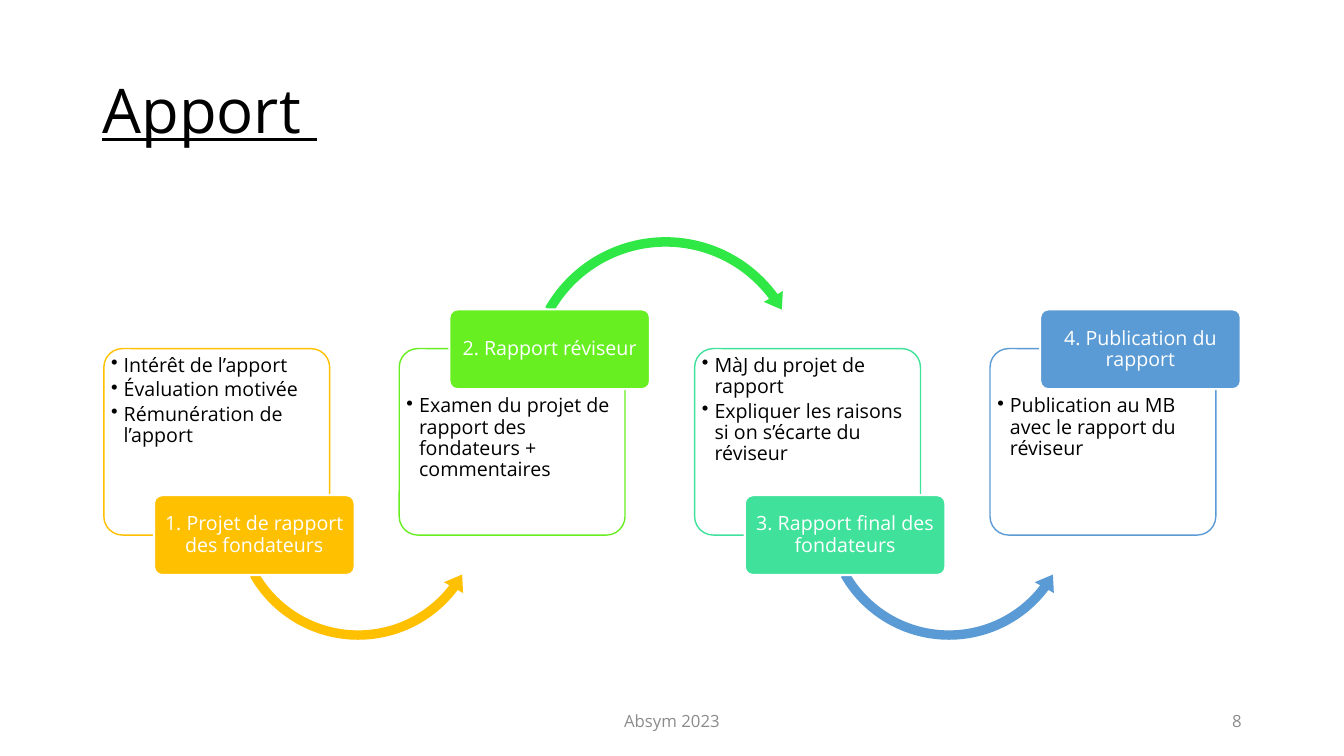
import pptx
import pptx.dml.color
import pptx.enum.shapes
import pptx.enum.text
import pptx.oxml.ns
import pptx.util
from lxml import etree

Pt = pptx.util.Pt
RGBColor = pptx.dml.color.RGBColor
SHAPE = pptx.enum.shapes.MSO_SHAPE
ALIGN = pptx.enum.text.PP_ALIGN
ANCHOR = pptx.enum.text.MSO_ANCHOR

BLACK = RGBColor(0x00, 0x00, 0x00)
WHITE = RGBColor(0xFF, 0xFF, 0xFF)
GREY = RGBColor(0x8C, 0x8C, 0x8C)
AMBER = RGBColor(0xFF, 0xC0, 0x00)
LIME = RGBColor(0x67, 0xEF, 0x21)
GREEN = RGBColor(0x30, 0xE8, 0x45)
MINT = RGBColor(0x3F, 0xE1, 0x9B)
BLUE = RGBColor(0x5B, 0x9B, 0xD5)

# Colour, label, bullets and colour of the arrow to the next stage
STAGES = [
    (AMBER, "1. Projet de rapport des fondateurs",
     ["Intérêt de l’apport", "Évaluation motivée", "Rémunération de l’apport"], AMBER),
    (LIME, "2. Rapport réviseur",
     ["Examen du projet de rapport des fondateurs + commentaires"], GREEN),
    (MINT, "3. Rapport final des fondateurs",
     ["MàJ du projet de rapport",
      "Expliquer les raisons si on s’écarte du réviseur"], BLUE),
    (BLUE, "4. Publication du rapport",
     ["Publication au MB avec le rapport du réviseur"], None),
]
FIRST_LEFT, STAGE_PITCH = 74.2, 211


class SlideBuilder:
    font_name = "Open Sans"
    line_spacing = 0.9

    def __init__(self, slide):
        self.slide = slide

    def format(self, paragraph, size, color, alignment):
        paragraph.alignment = alignment
        paragraph.font.name = self.font_name
        paragraph.font.size = Pt(size)
        paragraph.font.color.rgb = color

    def title(self, text, left, top, width, height):
        title = self.slide.shapes.title
        title.left, title.top, title.width, title.height = map(Pt, (left, top, width, height))
        frame = title.text_frame
        frame.text = text
        frame.auto_size = pptx.enum.text.MSO_AUTO_SIZE.NONE
        frame.vertical_anchor = ANCHOR.MIDDLE
        paragraph = frame.paragraphs[0]
        self.format(paragraph, 44, BLACK, ALIGN.LEFT)
        paragraph.line_spacing = self.line_spacing
        paragraph.font.underline = True

    def footer(self, text, left, width, alignment):
        box = self.slide.shapes.add_textbox(Pt(left), Pt(500.5), Pt(width), Pt(28.8))
        frame = box.text_frame
        frame.word_wrap = True
        frame.vertical_anchor = ANCHOR.MIDDLE
        frame.text = text
        self.format(frame.paragraphs[0], 12, GREY, alignment)

    def shape(self, kind, left, top, width, height, adjustments, fill, line=None, line_width=1):
        shape = self.slide.shapes.add_shape(kind, Pt(left), Pt(top), Pt(width), Pt(height))
        shape.shadow.inherit = False
        for index, value in enumerate(adjustments):
            shape.adjustments[index] = value
        shape.fill.solid()
        shape.fill.fore_color.rgb = fill
        if line is None:
            shape.line.fill.background()
        else:
            shape.line.color.rgb = line
            shape.line.width = Pt(line_width)
        return shape

    def fill_text(self, shape, texts, anchor, margins):
        frame = shape.text_frame
        frame.word_wrap = True
        frame.vertical_anchor = anchor
        (frame.margin_left, frame.margin_top,
         frame.margin_right, frame.margin_bottom) = map(Pt, margins)
        frame.text = "\n".join(texts)
        for paragraph in frame.paragraphs:
            paragraph.line_spacing = self.line_spacing
        return frame.paragraphs

    def panel(self, left, color, bullets, text_top):
        panel = self.shape(SHAPE.ROUNDED_RECTANGLE, left, 249, 161.3, 133.2, [0.1], WHITE, color)
        for paragraph in self.fill_text(panel, bullets, ANCHOR.TOP, (1.3, text_top, 1.9, 1)):
            paragraph.space_after = Pt(2.1)
            properties = paragraph._p.get_or_add_pPr()
            properties.set("marL", str(Pt(9)))
            properties.set("indent", str(-Pt(9)))
            bullet = etree.SubElement(properties, pptx.oxml.ns.qn("a:buChar"))
            bullet.set("char", "•")
            self.format(paragraph, 14, BLACK, ALIGN.LEFT)

    def label(self, left, top, color, text):
        label = self.shape(SHAPE.ROUNDED_RECTANGLE, left, top, 143.3, 57, [0.1],
                           color, WHITE, 1.5)
        for paragraph in self.fill_text(label, [text], ANCHOR.MIDDLE, (2.2, 1.5, 2.2, 1.5)):
            self.format(paragraph, 14, WHITE, ALIGN.CENTER)

    def arrow_below(self, left, color):
        self.shape(SHAPE.LEFT_CIRCULAR_ARROW, left + 88.4, 275, 186.5, 186.5,
                   [0.036, 4.501, 22.256, 90.245, 0.042], color)

    def arrow_above(self, left, color):
        self.shape(SHAPE.CIRCULAR_ARROW, left + 87, 165, 206.6, 206.6,
                   [0.033, 4.019, 194.226, 125.755, 0.038], color)


def main():
    presentation = pptx.Presentation()
    presentation.slide_width, presentation.slide_height = Pt(960), Pt(540)
    slide = presentation.slides.add_slide(presentation.slide_layouts[5])
    builder = SlideBuilder(slide)

    builder.title("Apport ", 66, 28.75, 828, 104.4)

    # Stages, with labels alternating below and above
    for index, (color, label, bullets, arrow_color) in enumerate(STAGES):
        left = FIRST_LEFT + index * STAGE_PITCH
        label_above = index % 2 == 1
        builder.panel(left, color, bullets, 30 if label_above else 1.3)
        if arrow_color is not None:
            draw_arrow = builder.arrow_above if label_above else builder.arrow_below
            draw_arrow(left, arrow_color)
        builder.label(left + 35.8, 221 if label_above else 353.7, color, label)

    # Footer
    builder.footer("Absym 2023", 318, 324, ALIGN.CENTER)
    builder.footer("8", 678, 216, ALIGN.RIGHT)

    presentation.save("out.pptx")


if __name__ == "__main__":
    main()
